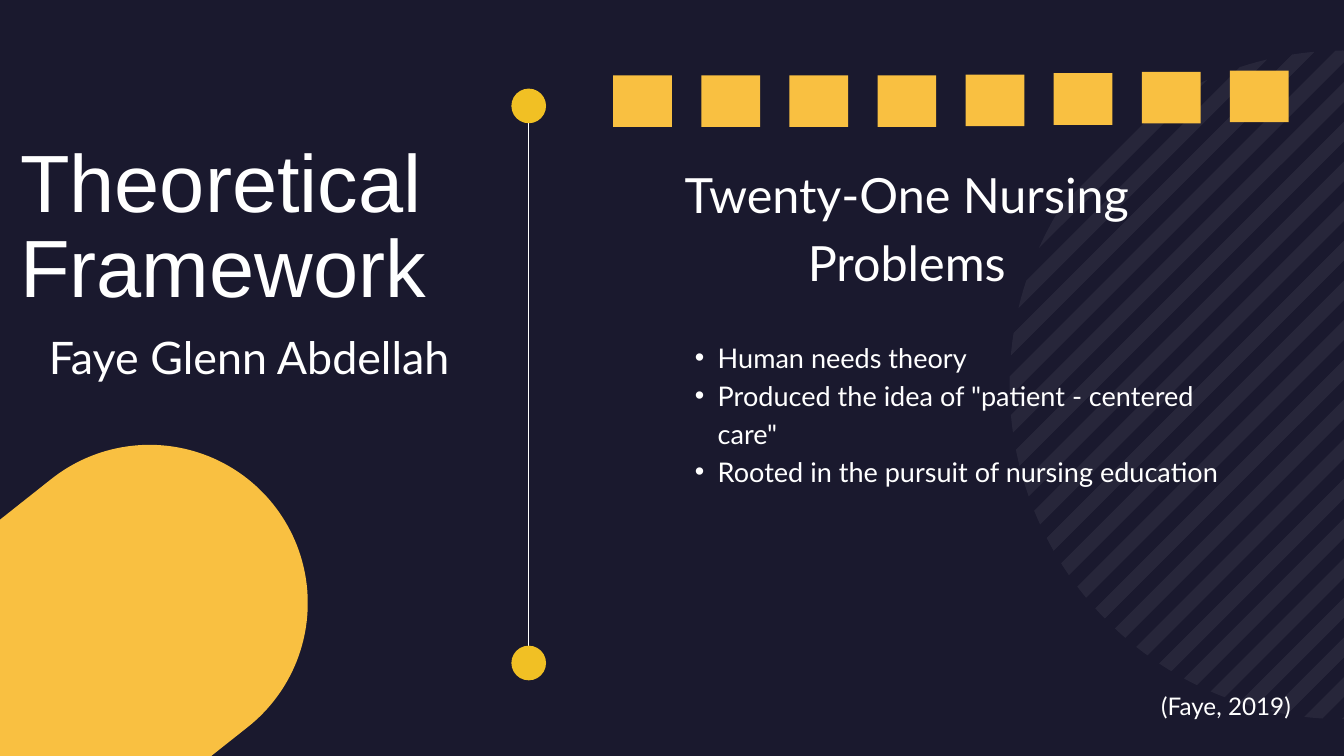
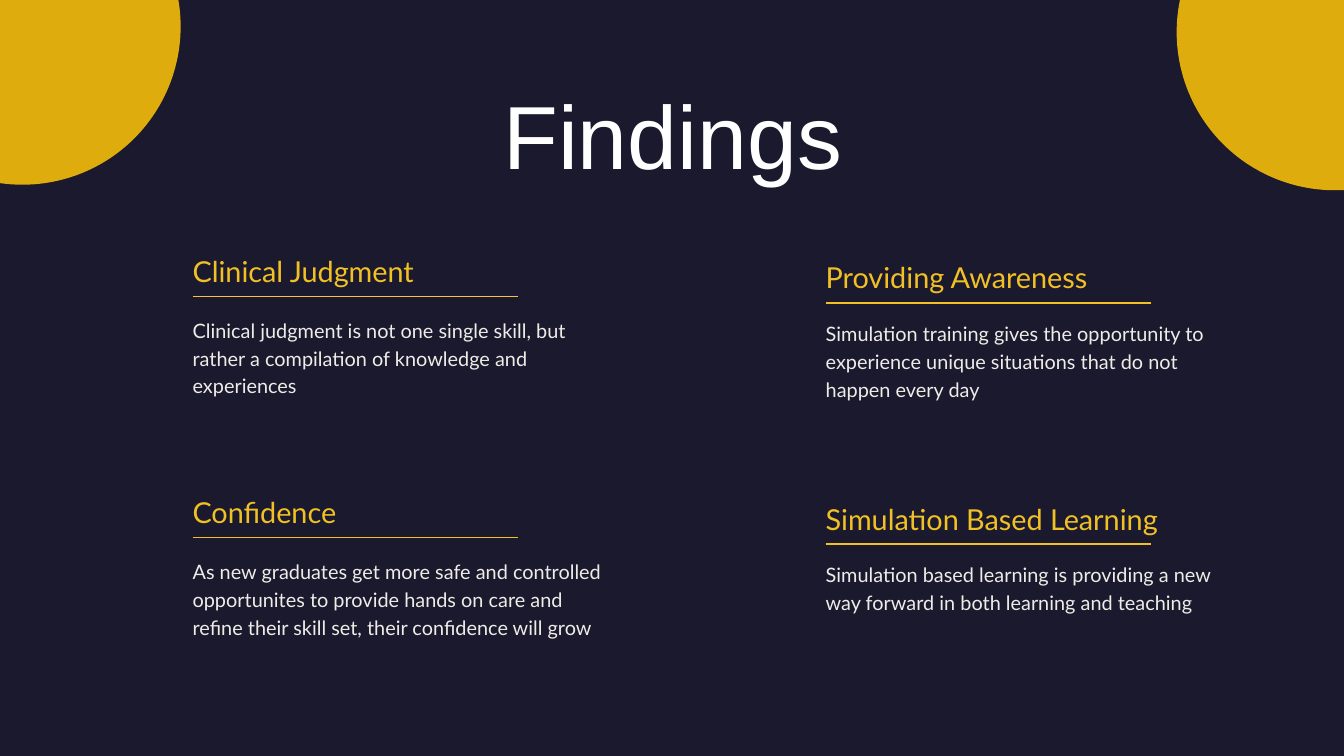
from math import acos, cos, pi, sin, sqrt

from lxml.etree import SubElement
from pptx import Presentation
from pptx.dml.color import RGBColor
from pptx.enum.shapes import MSO_CONNECTOR, MSO_SHAPE
from pptx.enum.text import MSO_AUTO_SIZE, PP_ALIGN
from pptx.oxml.ns import qn
from pptx.util import Cm, Pt

NAVY = "1A192E"
WHITE = "FFFFFF"
CREAM = "EFECE7"
AMBER = "F9C041"
GOLD = "F1C024"
MUSTARD = "DFAC0D"

FRAME_FORMAT = {
    "margin_left": 0,
    "margin_top": 0,
    "margin_right": 0,
    "margin_bottom": 0,
    "word_wrap": True,
    "auto_size": MSO_AUTO_SIZE.SHAPE_TO_FIT_TEXT,
}
TITLE = {"name": "Arial", "size": Pt(87)}
LARGE_TITLE = {"name": "Arial", "size": Pt(96)}
SUBTITLE = {"name": "Lato", "size": Pt(52)}
AUTHOR = {"name": "Lato", "size": Pt(48)}
BULLET = {"name": "Lato", "size": Pt(29)}
CITATION = {"name": "Lato", "size": Pt(26)}
HEADING = {"name": "Lato", "size": Pt(30.9)}
BODY = {"name": "Lato", "size": Pt(21.34)}


def color(hex_value):
    return RGBColor.from_string(hex_value)


def add_text(slide, box, lines, font_format, spacing, hex_value=WHITE,
             alignment=PP_ALIGN.LEFT, bulleted=False):
    frame = slide.shapes.add_textbox(*[Cm(length) for length in box]).text_frame
    for name, value in FRAME_FORMAT.items():
        setattr(frame, name, value)
    for index, line in enumerate(lines):
        paragraph = frame.add_paragraph() if index else frame.paragraphs[0]
        paragraph.alignment = alignment
        paragraph.line_spacing = Pt(spacing)
        run = paragraph.add_run()
        run.text = line
        for name, value in font_format.items():
            setattr(run.font, name, value)
        run.font.color.rgb = color(hex_value)
        if bulleted:
            properties = paragraph._p.get_or_add_pPr()
            properties.set("marL", str(Cm(1.73)))
            properties.set("indent", str(Cm(-0.86)))
            SubElement(properties, qn("a:buFont")).set("typeface", "Arial")
            SubElement(properties, qn("a:buChar")).set("char", "•")


presentation = Presentation()
presentation.slide_width = Cm(50.8)
presentation.slide_height = Cm(28.58)
framework, findings = [
    presentation.slides.add_slide(presentation.slide_layouts[6]) for _ in range(2)
]
for slide in (framework, findings):
    slide.background.fill.solid()
    slide.background.fill.fore_color.rgb = color(NAVY)

finding_columns = [
    (7.28, 9.36, 11.2, 11.88, [
        ("Clinical Judgment", AMBER, 3.05,
         "Clinical judgment is not one single skill, but rather a compilation of "
         "knowledge and experiences"),
        ("Confidence", GOLD, 4.09,
         "As new graduates get more safe and controlled opportunites to provide "
         "hands on care and refine their skill set, their confidence will grow"),
    ]),
    (31.21, 9.62, 11.45, 12.01, [
        ("Providing Awareness", GOLD, 3.05,
         "Simulation training gives the opportunity to experience unique "
         "situations that do not happen every day"),
        ("Simulation Based Learning", GOLD, 2.01,
         "Simulation based learning is providing a new way forward in both "
         "learning and teaching"),
    ]),
]
row_pitch = 9.12

rules = [(framework, 19.98, 4.09, 19.98, 24.94, WHITE)]
for left, heading_top, rule_top, body_top, entries in finding_columns:
    for row, (heading, rule_color, body_height, body) in enumerate(entries):
        top = rule_top + row * row_pitch
        rules.append((findings, left, top, left + 12.31, top, rule_color))
for slide, *ends, hex_value in rules:
    rule = slide.shapes.add_connector(
        MSO_CONNECTOR.STRAIGHT, *[Cm(length) for length in ends])
    rule.line.color.rgb = color(hex_value)
    rule.line.width = Pt(1.5)
    SubElement(rule._element.spPr, qn("a:effectLst"))

filled_shapes = []
for top in (3.35, 24.41):
    dot = framework.shapes.add_shape(
        MSO_SHAPE.OVAL, Cm(19.33), Cm(top), Cm(1.31), Cm(1.31))
    filled_shapes.append((dot, GOLD))

dome_radius = 5.98
half_turn = str(180 * 60000)
domes = [
    (framework, 3.87, 24.21, 16.51, 51.6, AMBER),
    (findings, 2.65, 2.21, 7.62, 123.8, MUSTARD),
    (findings, 48.68, 2.46, 7.62, 234.9, MUSTARD),
]
for slide, center_x, center_y, height, rotation, hex_value in domes:
    left, right = center_x - dome_radius, center_x + dome_radius
    top, bottom = center_y - height / 2, center_y + height / 2
    shoulder = top + dome_radius
    outline = [(left, bottom), (left, shoulder), (center_x, top),
               (right, shoulder), (right, bottom)]
    points = [(Cm(x), Cm(y)) for x, y in outline]
    builder = slide.shapes.build_freeform(*points[0])
    builder.add_line_segments(points[1:], close=True)
    dome = builder.convert_to_shape()
    dome.rotation = rotation
    to_shoulder, to_top, to_right, to_bottom = dome._element.findall(
        ".//" + qn("a:lnTo"))
    arc = SubElement(to_top.getparent(), qn("a:arcTo"))
    for name, value in {"wR": str(Cm(dome_radius)), "hR": str(Cm(dome_radius)),
                        "stAng": half_turn, "swAng": half_turn}.items():
        arc.set(name, value)
    to_top.getparent().replace(to_top, arc)
    to_right.getparent().remove(to_right)
    filled_shapes.append((dome, hex_value))

disc_x, disc_y, disc_radius = 50.8, 14.55, 12.64
stripe_builder = None
for stripe in range(24):
    near, far = [
        acos((47.9 + 1.5 * stripe + edge - disc_x - disc_y) / sqrt(2) / disc_radius)
        for edge in (0, 0.75)
    ]
    side = [near + (far - near) * step / 3 for step in range(4)]
    angles = side + [-angle for angle in reversed(side)]
    points = [(Cm(disc_x + disc_radius * cos(pi / 4 + angle)),
               Cm(disc_y + disc_radius * sin(pi / 4 + angle))) for angle in angles]
    if stripe_builder is None:
        stripe_builder = framework.shapes.build_freeform(*points[0])
    else:
        stripe_builder.move_to(*points[0])
    stripe_builder.add_line_segments(points[1:], close=True)
striped_disc = stripe_builder.convert_to_shape()
filled_shapes.append((striped_disc, WHITE))

for column, top in enumerate([2.85] * 4 + [2.82, 2.77, 2.72, 2.67]):
    block = framework.shapes.add_shape(
        MSO_SHAPE.RECTANGLE, Cm(23.18 + 3.33 * column), Cm(top), Cm(2.22), Cm(1.95))
    filled_shapes.append((block, AMBER))

for shape, hex_value in filled_shapes:
    shape.shadow.inherit = False
    shape.fill.solid()
    shape.fill.fore_color.rgb = color(hex_value)
    shape.line.fill.background()
disc_color = striped_disc._element.spPr.find(qn("a:solidFill"))[0]
SubElement(disc_color, qn("a:alpha")).set("val", "6000")

add_text(framework, (0.76, 5.41, 17.35, 6.55), ["Theoretical Framework"], TITLE, 91.3)
add_text(framework, (25.4, 12.7, 21.11, 7.09), [
    "Human needs theory",
    'Produced the idea of "patient - centered care"',
    "Rooted in the pursuit of nursing education",
], BULLET, 40.6, bulleted=True)

centered_texts = [
    (framework, (24.28, 5.87, 19.99, 5.03), "Twenty-One Nursing Problems", SUBTITLE, 72.8),
    (framework, (1.04, 12.12, 16.76, 2.26), "Faye Glenn Abdellah", AUTHOR, 67.2),
    (framework, (43.66, 25.93, 5.36, 1.24), "(Faye, 2019)", CITATION, 36.4),
    (findings, (10.62, 2.34, 29.62, 4.6), "Findings", LARGE_TITLE, 134.4),
]
for slide, box, text, font_format, spacing in centered_texts:
    add_text(slide, box, [text], font_format, spacing, alignment=PP_ALIGN.CENTER)

for left, heading_top, rule_top, body_top, entries in finding_columns:
    for row, (heading, rule_color, body_height, body) in enumerate(entries):
        offset = row * row_pitch
        add_text(findings, (left, heading_top + offset, 14.48, 1.47),
                 [heading], HEADING, 43.2, GOLD)
        add_text(findings, (left, body_top + offset, 15.6, body_height),
                 [body], BODY, 29.9, CREAM)

presentation.save("out.pptx")
